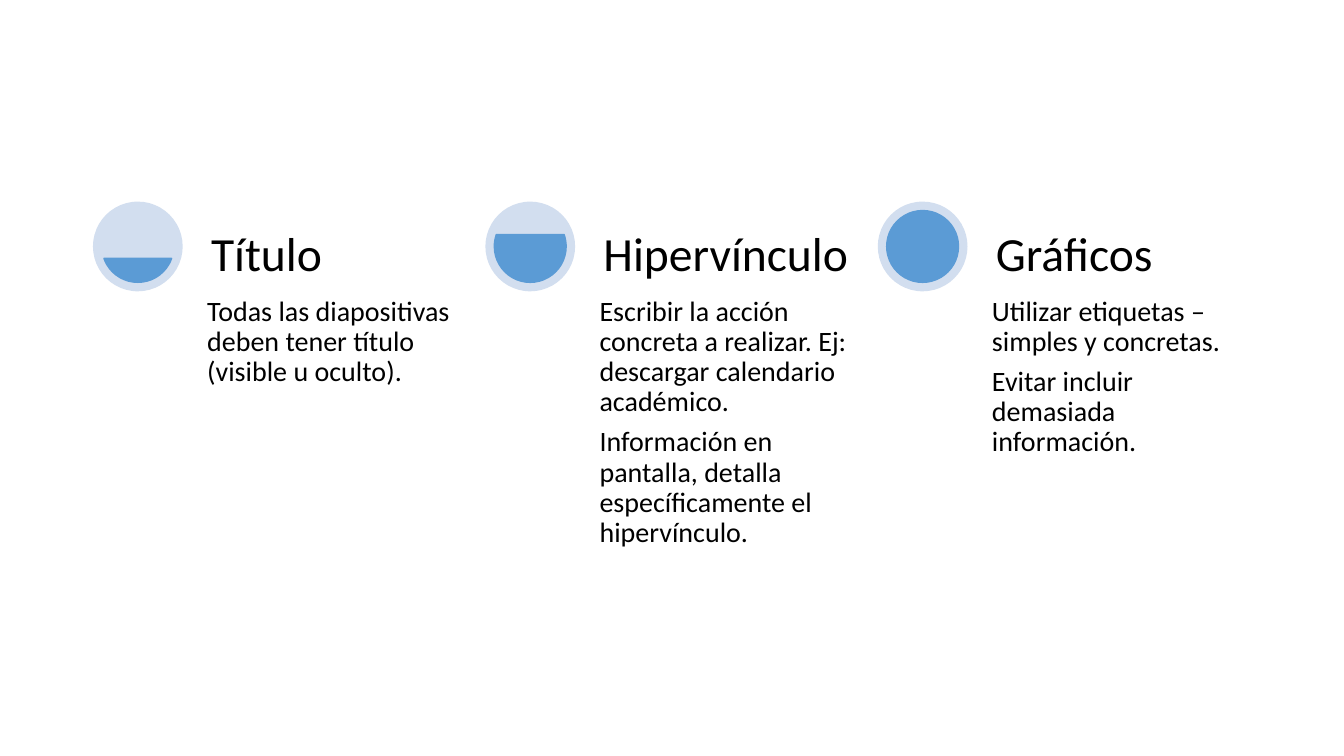
from math import asin, degrees

from pptx import Presentation
from pptx.dml.color import RGBColor
from pptx.enum.shapes import MSO_SHAPE
from pptx.enum.text import MSO_ANCHOR
from pptx.util import Pt

TOPICS = [
    ("Título", ["Todas las diapositivas deben tener título (visible u oculto)."]),
    ("Hipervínculo", [
        "Escribir la acción concreta a realizar. Ej: descargar calendario académico.",
        "Información en pantalla, detalla específicamente el hipervínculo.",
    ]),
    ("Gráficos", [
        "Utilizar etiquetas – simples y concretas.",
        "Evitar incluir demasiada información.",
    ]),
]

PALE_BLUE = RGBColor(0xD2, 0xDE, 0xEF)
BLUE = RGBColor(0x5B, 0x9B, 0xD5)
BLACK = RGBColor(0, 0, 0)
ELLIPSE, CHORD = MSO_SHAPE.OVAL, MSO_SHAPE.CHORD
TOP, BOTTOM = MSO_ANCHOR.TOP, MSO_ANCHOR.BOTTOM

LEFT, ROW_TOP, PITCH = 66.4, 144, 280.3
CIRCLE, RIM = 64.1, 6.4
TEXT_OFFSET, TEXT_WIDTH, BODY_HEIGHT = 77.6, 189.4, 269.3
CHORD_UNITS_PER_DEGREE = 0.6


def add_disc(page, kind, left, top, size, color):
    disc = page.shapes.add_shape(kind, Pt(left), Pt(top), Pt(size), Pt(size))
    disc.shadow.inherit = False
    disc.fill.solid()
    disc.fill.fore_color.rgb = color
    return disc


def add_gauge(page, left, level):
    rim = add_disc(page, ELLIPSE, left, ROW_TOP, CIRCLE, PALE_BLUE)
    rim.line.fill.background()
    liquid = add_disc(page, CHORD, left + RIM, ROW_TOP + RIM, CIRCLE - 2 * RIM, BLUE)
    liquid.line.color.rgb = BLUE
    liquid.line.width = Pt(1)
    angle = degrees(asin(1 - 2 * level))
    liquid.adjustments[0] = angle % 360 * CHORD_UNITS_PER_DEGREE
    liquid.adjustments[1] = (180 - angle) % 360 * CHORD_UNITS_PER_DEGREE


def add_text(page, left, top, height, lines, size, inset, anchor):
    box = page.shapes.add_textbox(Pt(left), Pt(top), Pt(TEXT_WIDTH), Pt(height))
    frame = box.text_frame
    frame.word_wrap = True
    frame.vertical_anchor = anchor
    frame.margin_left = frame.margin_right = Pt(inset)
    frame.margin_top = frame.margin_bottom = Pt(inset)
    frame.text = "\n".join(lines)
    for para in frame.paragraphs:
        para.line_spacing = 0.9
        para.space_after = Pt(0.35 * size)
        para.font.name = "Calibri"
        para.font.size = Pt(size)
        para.font.color.rgb = BLACK


def main():
    deck = Presentation()
    deck.slide_width, deck.slide_height = Pt(960), Pt(540)
    page = deck.slides.add_slide(deck.slide_layouts[6])
    for index, (heading, lines) in enumerate(TOPICS):
        left = LEFT + index * PITCH
        text_left = left + TEXT_OFFSET
        add_gauge(page, left, (index + 1) / len(TOPICS))
        add_text(page, text_left, ROW_TOP + CIRCLE, BODY_HEIGHT, lines, 20, 4, TOP)
        add_text(page, text_left, ROW_TOP, CIRCLE, [heading], 34, 6.8, BOTTOM)
    deck.save("out.pptx")


if __name__ == "__main__":
    main()
